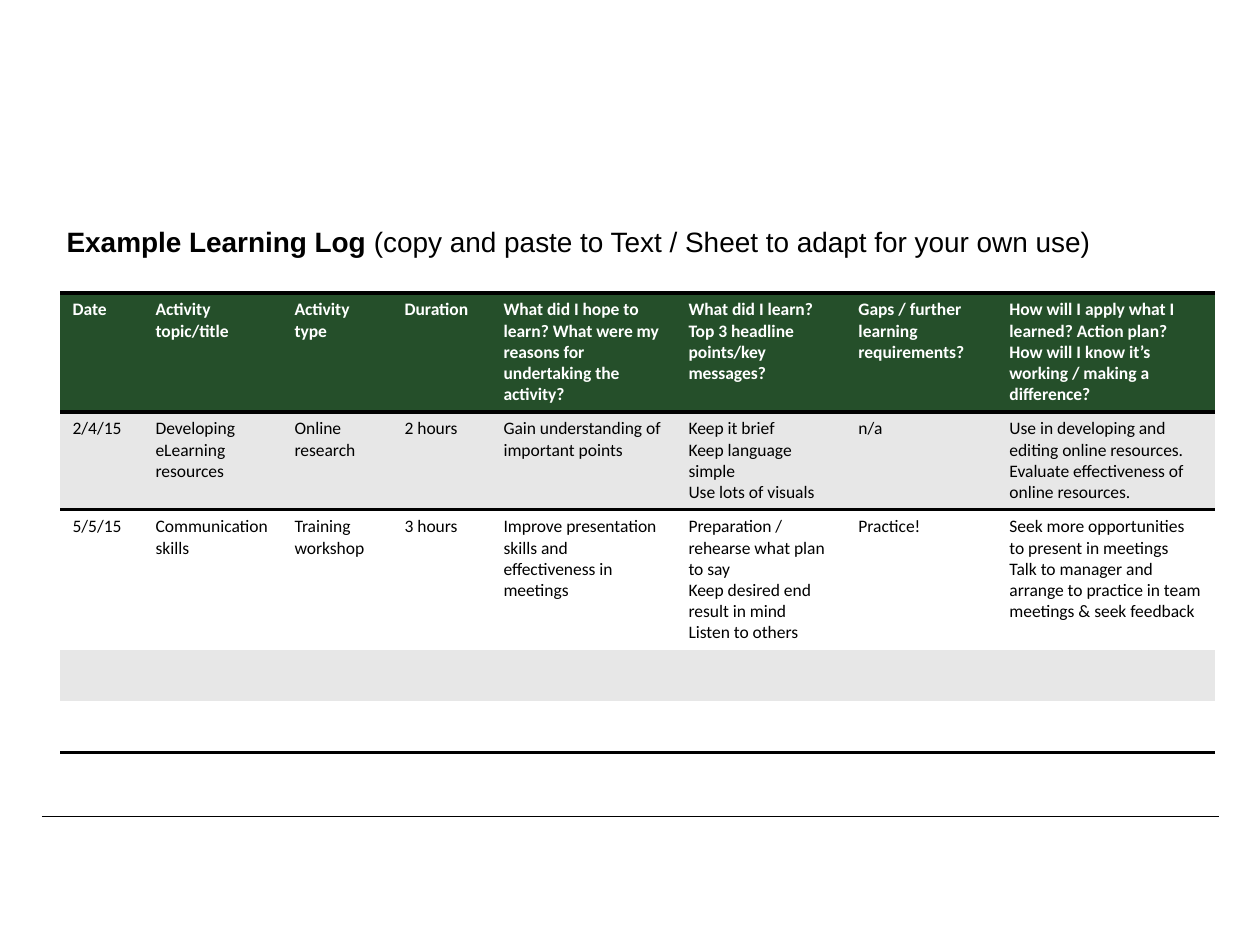
from lxml.etree import SubElement
from pptx import Presentation
from pptx.dml.color import RGBColor
from pptx.enum.shapes import MSO_CONNECTOR
from pptx.enum.text import MSO_ANCHOR, PP_ALIGN
from pptx.oxml.ns import qn
from pptx.util import Emu, Pt

HEADING = [
    ("Example Learning Log ", True),
    ("(copy and paste to Text / Sheet to adapt for your own use)", False),
]
COLUMNS = [
    ("Date", 83),
    ("Activity topic/title", 139),
    ("Activity type", 110),
    ("Duration", 99),
    ("What did I hope to learn? What were my reasons for undertaking the activity?", 185),
    ("What did I learn? Top 3 headline points/key messages?", 170),
    ("Gaps / further learning requirements?", 151),
    ("How will I apply what I learned? Action plan? "
     "How will I know it’s working / making a difference?", 218),
]
ENTRIES = [
    ["2/4/15", "Developing eLearning resources", "Online research", "2 hours",
     "Gain understanding of important points",
     "Keep it brief\nKeep language simple\nUse lots of visuals",
     "n/a",
     "Use in developing and editing online resources.\n"
     "Evaluate effectiveness of online resources."],
    ["5/5/15", "Communication skills", "Training workshop", "3 hours",
     "Improve presentation skills and effectiveness in meetings",
     "Preparation / rehearse what plan to say\n"
     "Keep desired end result in mind\nListen to others",
     "Practice!",
     "Seek more opportunities to present in meetings\n"
     "Talk to manager and arrange to practice in team meetings & seek feedback"],
    [""] * len(COLUMNS),
    [""] * len(COLUMNS),
]
ROW_HEIGHTS = [119, 98, 140, 51, 51]
BLACK, WHITE, GREEN, GREY = "000000", "FFFFFF", "254F2A", "E7E7E7"
NO_STYLE = "{2D5ABB26-0587-4C30-8999-92F81FD0307C}"


def px(length):
    return Emu(length * 914400 // 126)


def rgb(colour):
    return RGBColor.from_string(colour)


def add_run(paragraph, text, font_name, size, colour, bold):
    run = paragraph.add_run()
    run.text = text
    run.font.name, run.font.size, run.font.bold = font_name, Pt(size), bold
    run.font.color.rgb = rgb(colour)


def add_border(cell, side):
    border = SubElement(cell._tc.get_or_add_tcPr(), qn(f"a:{side}"), w=str(Pt(2)))
    SubElement(SubElement(border, qn("a:solidFill")), qn("a:srgbClr"), val=BLACK)


def add_heading(slide):
    heading = slide.shapes.title
    heading.left, heading.top, heading.width, heading.height = map(px, (54, 218, 1171, 47))
    frame = heading.text_frame
    frame.word_wrap = True
    frame.vertical_anchor = MSO_ANCHOR.TOP
    frame.paragraphs[0].alignment = PP_ALIGN.LEFT
    for text, bold in HEADING:
        add_run(frame.paragraphs[0], text, "Arial", 16, BLACK, bold)


def add_log(slide):
    labels, widths = zip(*COLUMNS)
    rows = [labels] + ENTRIES
    log = slide.shapes.add_table(len(rows), len(labels), px(60), px(293),
                                 px(sum(widths)), px(sum(ROW_HEIGHTS))).table
    log.first_row = log.horz_banding = False
    log._tbl.tblPr.find(qn("a:tableStyleId")).text = NO_STYLE
    for column, width in zip(log.columns, widths):
        column.width = px(width)
    for r, texts in enumerate(rows):
        log.rows[r].height = px(ROW_HEIGHTS[r])
        is_header = r == 0
        fill = GREEN if is_header else GREY if r % 2 else WHITE
        for c, text in enumerate(texts):
            cell = log.cell(r, c)
            if r in (0, 1):
                add_border(cell, "lnT")
            if r in (0, len(rows) - 1):
                add_border(cell, "lnB")
            cell.fill.solid()
            cell.fill.fore_color.rgb = rgb(fill)
            for i, line in enumerate(text.split("\n") if text else []):
                frame = cell.text_frame
                paragraph = frame.add_paragraph() if i else frame.paragraphs[0]
                add_run(paragraph, line, "Calibri", 10,
                        WHITE if is_header else BLACK, is_header)


def add_footer_rule(slide):
    rule = slide.shapes.add_connector(MSO_CONNECTOR.STRAIGHT,
                                      px(42), px(816), px(1219), px(816))
    rule.line.color.rgb = rgb(BLACK)
    rule.line.width = Pt(0.5)
    SubElement(rule._element.spPr, qn("a:effectLst"))


def main():
    deck = Presentation()
    deck.slide_width, deck.slide_height = px(1260), px(945)
    slide = deck.slides.add_slide(deck.slide_layouts[5])
    add_footer_rule(slide)
    add_log(slide)
    add_heading(slide)
    deck.save("out.pptx")


if __name__ == "__main__":
    main()
